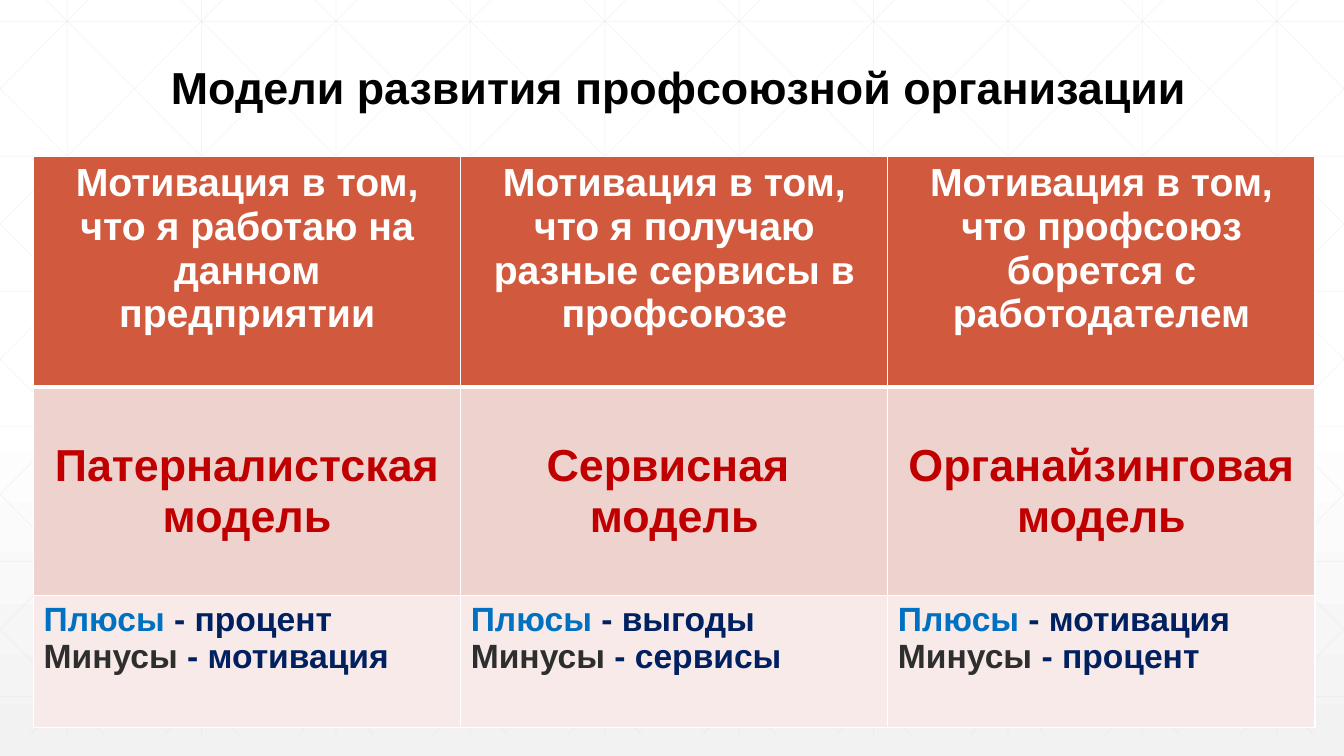
from pptx import Presentation
from pptx.dml.color import RGBColor
from pptx.enum.shapes import MSO_CONNECTOR as CONN
from pptx.enum.text import MSO_ANCHOR as ANCHOR, MSO_AUTO_SIZE as AUTO, PP_ALIGN as ALIGN
from pptx.oxml.ns import qn
from pptx.util import Inches, Pt
from lxml.etree import SubElement
from copy import deepcopy

COLS, ROWS = 40, 30
WHITE, RED, BLUE, NAVY, GRAY = "FFFFFF", "C00000", "0070C0", "002060", "2D2E2D"


def rgb(color):
    return RGBColor.from_string(color)


class Deck:
    font = "Arial"
    grid_color = "D9D9D9"

    def __init__(self):
        self.prs = Presentation()
        self.prs.slide_width, self.prs.slide_height = Inches(13.33), Inches(7.5)
        self.s = self.prs.slides.add_slide(self.prs.slide_layouts[5])

    def x(self, col):
        return round(self.prs.slide_width * col / COLS)

    def y(self, row):
        return round(self.prs.slide_height * row / ROWS)

    def background(self, stops):
        fill = self.s.background.fill
        fill.gradient()
        fill.gradient_angle = 270
        first = fill.gradient_stops[0]._gs
        first.addnext(deepcopy(first))
        for stop, (position, color) in zip(fill.gradient_stops, stops):
            stop.position = position
            stop.color.rgb = rgb(color)

    def line(self, group, x1, y1, x2, y2):
        c = group.shapes.add_connector(CONN.STRAIGHT, self.x(x1), self.y(y1), self.x(x2), self.y(y2))
        c.line.width = Pt(0.5)
        c.line.color.rgb = rgb(self.grid_color)
        sp_pr = c._element.spPr
        SubElement(next(sp_pr.iter(qn("a:srgbClr"))), qn("a:alpha"), val="25000")
        SubElement(sp_pr, qn("a:effectLst"))

    def pattern(self, top=-0.84, bottom=29.16, step=4, run=22.36):
        group = self.s.shapes.add_group_shape()
        for i in range(10):
            self.line(group, 2 + step * i, top, 2 + step * i, bottom)
        for i in range(6):
            row = 0.84 + 5.36 * i
            self.line(group, 0, row, COLS, row)
        for i in range(-5, 10):
            start = 0.75 + step * i
            x1, x2 = max(0, start), min(COLS, start + run)
            y1, y2 = (top + (bottom - top) * (col - start) / run for col in (x1, x2))
            self.line(group, x1, y1, x2, y2)
            self.line(group, COLS - x1, y1, COLS - x2, y2)

    def style(self, p, size, color, align):
        p.alignment = align
        f = p.font
        f.name, f.size, f.bold = self.font, Pt(size), True
        f.color.rgb = rgb(color)

    def title(self, text, col, row, width, height):
        sp = self.s.shapes.title
        self.s.shapes._spTree.append(sp._element)
        sp.left, sp.top = self.x(col), self.y(row)
        sp.width, sp.height = self.x(width), self.y(height)
        tf = sp.text_frame
        tf.text = text
        tf.auto_size, tf.vertical_anchor, tf.word_wrap = AUTO.NONE, ANCHOR.BOTTOM, True
        tf.paragraphs[0].line_spacing = 0.9
        self.style(tf.paragraphs[0], 32, "000000", ALIGN.CENTER)

    def borders(self, cell, top, bottom):
        tc_pr = cell._tc.get_or_add_tcPr()
        for side, width in (("L", 1), ("R", 1), ("T", top), ("B", bottom)):
            ln = SubElement(tc_pr, qn(f"a:ln{side}"), w=str(Pt(width)))
            SubElement(SubElement(ln, qn("a:solidFill")), qn("a:srgbClr"), val=WHITE)

    def cell(self, cell, paragraphs, fill, size, color, align, anchor):
        cell.fill.solid()
        cell.fill.fore_color.rgb = rgb(fill)
        cell.vertical_anchor = anchor
        tf = cell.text_frame
        for i, runs in enumerate(paragraphs):
            p = tf.add_paragraph() if i else tf.paragraphs[0]
            self.style(p, size, color, align)
            for text, run_color in runs:
                r = p.add_run()
                r.text = text
                r.font.color.rgb = rgb(run_color)

    def table(self, rows, col, row, width, heights):
        n = len(rows[0]["cells"])
        table = self.s.shapes.add_table(len(rows), n, self.x(col), self.y(row),
                                        self.x(width), self.y(sum(heights))).table
        for i, (spec_row, height) in enumerate(zip(rows, heights)):
            table.rows[i].height = self.y(height)
            for j, paragraphs in enumerate(spec_row["cells"]):
                cell = table.cell(i, j)
                self.borders(cell, 3 if i == 1 else 1, 3 if i == 0 else 1)
                self.cell(cell, paragraphs, *spec_row["look"])


def plain(color, *lines):
    return [[(line, color)] for line in lines]


def balance(plus, minus):
    return [[("Плюсы", BLUE), (f" - {plus}", NAVY)],
            [("Минусы", GRAY), (f" - {minus}", NAVY)]]


def main():
    deck = Deck()
    deck.background([(0, WHITE), (0.53, WHITE), (1, "F2F2F2")])
    deck.pattern()
    deck.title("Модели развития профсоюзной организации", 3.18, 1.12, 34.05, 3.6)
    motives = ["Мотивация в том, что я работаю на данном предприятии",
               "Мотивация в том, что я получаю разные сервисы в профсоюзе",
               "Мотивация в том, что профсоюз борется с работодателем"]
    models = [["Патерналистская модель"], ["Сервисная ", "модель"], ["Органайзинговая модель"]]
    balances = [("процент", "мотивация"), ("выгоды", "сервисы"), ("мотивация", "процент")]
    rows = [
        {"cells": [plain(WHITE, motive) for motive in motives],
         "look": ("D15A3E", 28, WHITE, ALIGN.CENTER, ANCHOR.TOP)},
        {"cells": [plain(RED, *model) for model in models],
         "look": ("EED2CE", 32, RED, ALIGN.CENTER, ANCHOR.MIDDLE)},
        {"cells": [balance(*pair) for pair in balances],
         "look": ("F7EAE8", 24, NAVY, ALIGN.LEFT, ANCHOR.TOP)},
    ]
    deck.table(rows, 1, 6.2, 38.14, [9.16, 8.28, 5.24])
    deck.prs.save("out.pptx")


if __name__ == "__main__":
    main()
